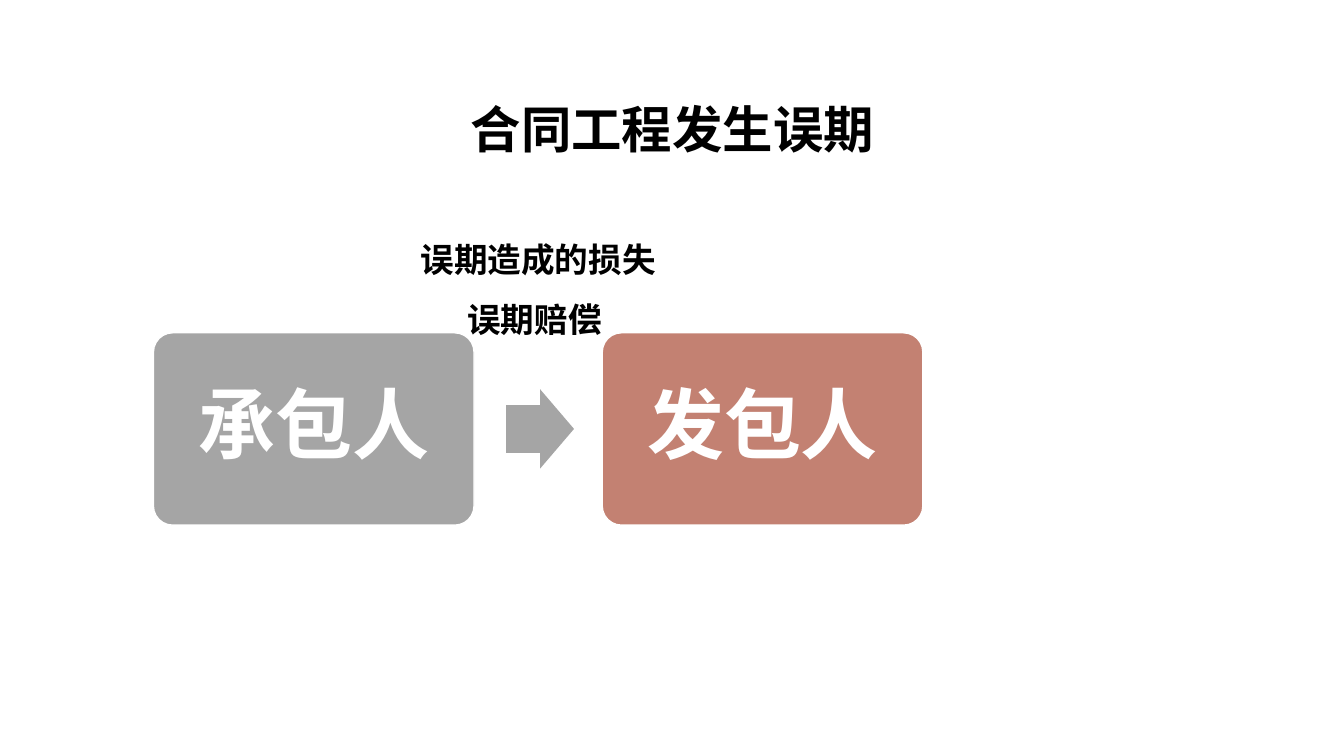
import pptx
import pptx.util
import pptx.dml.color
import pptx.enum.shapes
import pptx.enum.text
import pptx.oxml.ns
import lxml.etree

Pt = pptx.util.Pt
MIDDLE = pptx.enum.text.MSO_ANCHOR.MIDDLE
PRESETS = pptx.enum.shapes.MSO_SHAPE

# Content
heading = "合同工程发生误期"
liability = ["误期造成的损失", "误期赔偿 "]
parties = [("承包人", "grey"), ("发包人", "clay")]

# Theme
theme = {
    "grey": "A5A5A5", "clay": "C38172", "white": "FFFFFF", "black": "000000",
    "latin": "Times New Roman", "cjk": "Noto Sans CJK SC",
    "heading": 36, "party": 55, "liability": 24,
}

# Layout, in points
SLIDE = (960, 540)
HEADING_BOX = (66.24, 28.8, 828, 104.4)
LIABILITY_BOX = (292.3, 152.6, 184.3, 89.3)
PARTY_LEFT, PARTY_TOP, PARTY_W, PARTY_H = 109.6, 237.7, 229, 137.4
PITCH = PARTY_W * 1.4
ARROW_W, ARROW_H = 48.5, 56.8


def rgb(name):
    return pptx.dml.color.RGBColor.from_string(theme[name])


def write(frame, lines, size, color, font, spacing):
    frame.text = "\n".join(lines)
    frame.vertical_anchor = MIDDLE
    for paragraph in frame.paragraphs:
        paragraph.alignment = pptx.enum.text.PP_ALIGN.CENTER
        paragraph.line_spacing = spacing
        for run in paragraph.runs:
            run.font.size = Pt(theme[size])
            run.font.bold = True
            run.font.color.rgb = rgb(color)
            run.font.name = theme[font]
            east_asian = lxml.etree.SubElement(
                run.font._element, pptx.oxml.ns.qn("a:ea"))
            east_asian.set("typeface", theme["cjk"])


def add_block(slide, preset, box, fill, adjustments):
    block = slide.shapes.add_shape(preset, *map(Pt, box))
    block.shadow.inherit = False
    block.fill.solid()
    block.fill.fore_color.rgb = rgb(fill)
    block.line.fill.background()
    for index, value in enumerate(adjustments):
        block.adjustments[index] = value
    return block


def main():
    deck = pptx.Presentation()
    deck.slide_width, deck.slide_height = map(Pt, SLIDE)
    slide = deck.slides.add_slide(deck.slide_layouts[6])

    # Heading
    title = slide.shapes.add_textbox(*map(Pt, HEADING_BOX)).text_frame
    title.word_wrap = True
    write(title, [heading], "heading", "black", "latin", 1.5)

    # Contractor and employer
    for index, (party, fill) in enumerate(parties):
        box = (PARTY_LEFT + index * PITCH, PARTY_TOP, PARTY_W, PARTY_H)
        block = add_block(slide, PRESETS.ROUNDED_RECTANGLE, box, fill, [0.1])
        block.line.color.rgb = rgb("white")
        block.line.width = Pt(1)
        write(block.text_frame, [party], "party", "white", "latin", 0.9)

    # Arrow between them
    arrow_left = PARTY_LEFT + PARTY_W * 1.1
    arrow_top = PARTY_TOP + (PARTY_H - ARROW_H) / 2
    add_block(slide, PRESETS.RIGHT_ARROW,
              (arrow_left, arrow_top, ARROW_W, ARROW_H), "grey", [0.6, 0.5])

    # Liability label above the arrow
    label = slide.shapes.add_textbox(*map(Pt, LIABILITY_BOX)).text_frame
    label.word_wrap = False
    label.auto_size = pptx.enum.text.MSO_AUTO_SIZE.SHAPE_TO_FIT_TEXT
    write(label, liability, "liability", "black", "cjk", 1.5)
    label.vertical_anchor = pptx.enum.text.MSO_ANCHOR.TOP

    deck.save("out.pptx")


if __name__ == "__main__":
    main()
